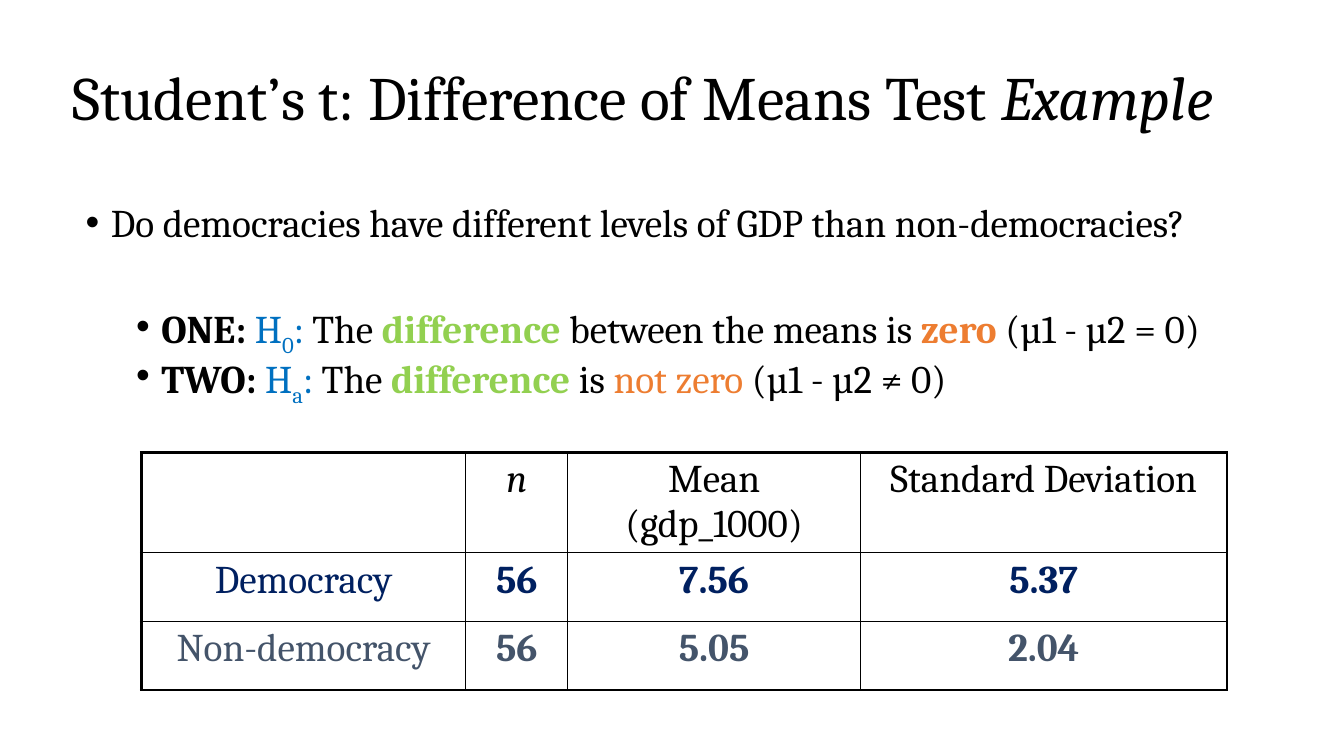
from lxml import etree
from pptx import Presentation
from pptx.dml.color import RGBColor
from pptx.enum.text import MSO_ANCHOR, MSO_AUTO_SIZE, PP_ALIGN
from pptx.oxml.ns import qn
from pptx.util import Cm, Pt

LEFT, CENTER = PP_ALIGN.LEFT, PP_ALIGN.CENTER
TOP, MIDDLE = MSO_ANCHOR.TOP, MSO_ANCHOR.MIDDLE
NO_FIT = MSO_AUTO_SIZE.NONE
FONT = "Cambria"
BLACK, BLUE, GREEN, ORANGE = "000000", "0070C0", "92D050", "ED7D31"
NAVY, SLATE = "002060", "44546A"
COLUMN_WIDTHS = (8.18, 2.57, 7.37, 9.24)
ROW_HEIGHTS = (2.53, 1.73, 1.73)
THIN, THICK = 1, 2.25


def color(value):
    return RGBColor.from_string(value)


def format_span(span, size, shade=BLACK, bold=False, italic=False):
    font = span.font
    font.name, font.size = FONT, Pt(size)
    font.bold, font.italic = bold, italic
    font.color.rgb = color(shade)


def add_span(para, text, size, shade=BLACK, bold=False, italic=False, subscript=False):
    span = para.add_run()
    span.text = text
    format_span(span, size, shade, bold, italic)
    if subscript:
        span._r.get_or_add_rPr().set("baseline", "-25000")


def place(box, left, top, width, height, anchor):
    box.left, box.top, box.width, box.height = Cm(left), Cm(top), Cm(width), Cm(height)
    frame = box.text_frame
    frame.word_wrap = True
    frame.auto_size = NO_FIT
    frame.vertical_anchor = anchor
    return frame


def format_bullet(para, level, indent, space_before):
    para.level = level
    para.alignment = LEFT
    para.line_spacing = 0.8
    para.space_before = Pt(space_before)
    properties = para._p.get_or_add_pPr()
    properties.set("marL", str(Cm(indent)))
    properties.set("indent", str(-Cm(0.635)))
    etree.SubElement(properties, qn("a:buFont")).set("typeface", "Arial")
    etree.SubElement(properties, qn("a:buChar")).set("char", "•")


def add_title(page):
    frame = place(page.shapes.title, 1.57, 0.94, 30.71, 3.18, MIDDLE)
    para = frame.paragraphs[0]
    para.alignment = LEFT
    para.line_spacing = 0.9
    add_span(para, "Student’s t: Difference of Means Test ", 44)
    add_span(para, "Example", 44, italic=True)


def add_hypothesis(frame, label, subscript, claim, space_before):
    para = frame.add_paragraph()
    format_bullet(para, 1, 1.905, space_before)
    add_span(para, label, 28, bold=True)
    add_span(para, "H", 28, BLUE)
    add_span(para, subscript, 28, BLUE, subscript=True)
    add_span(para, ": ", 28, BLUE)
    add_span(para, "The ", 28)
    add_span(para, "difference ", 28, GREEN, bold=True)
    for text, shade, bold in claim:
        add_span(para, text, 28, shade, bold)


def add_body(page):
    frame = place(page.placeholders[1], 1.905, 5.1, 29.85, 5.92, TOP)
    question = frame.paragraphs[0]
    format_bullet(question, 0, 0.635, 10)
    add_span(question, "Do democracies have different levels of GDP than non-democracies?", 28)
    add_hypothesis(frame, "ONE: ", "0", (
        ("between the means is ", BLACK, False),
        ("zero ", ORANGE, True),
        ("(µ1 - µ2 = 0)", BLACK, False),
    ), 46)
    add_hypothesis(frame, "TWO: ", "a", (
        ("is ", BLACK, False),
        ("not zero ", ORANGE, False),
        ("(µ1 - µ2 ≠ 0)", BLACK, False),
    ), 5)


def set_borders(cell, widths):
    properties = cell._tc.get_or_add_tcPr()
    for side, width in zip("LRTB", widths):
        line = etree.SubElement(properties, qn(f"a:ln{side}"))
        line.set("w", str(Pt(width)))
        fill = etree.SubElement(line, qn("a:solidFill"))
        etree.SubElement(fill, qn("a:srgbClr")).set("val", BLACK)


def fill_cell(cell, text, shade, bold, italic):
    cell.fill.background()
    cell.vertical_anchor = TOP
    cell.text_frame.text = text
    para = cell.text_frame.paragraphs[0]
    para.alignment = CENTER
    for span in para.runs:
        format_span(span, 28, shade, bold, italic)


def add_statistics(page):
    rows = (
        (BLACK, ("", "n", "Mean (gdp_1000)", "Standard Deviation")),
        (NAVY, ("Democracy", "56", "7.56", "5.37")),
        (SLATE, ("Non-democracy", "56", "5.05", "2.04")),
    )
    last = len(COLUMN_WIDTHS) - 1
    table = page.shapes.add_table(
        len(rows), len(COLUMN_WIDTHS), Cm(3.56), Cm(11.4),
        Cm(sum(COLUMN_WIDTHS)), Cm(sum(ROW_HEIGHTS)),
    ).table
    table.first_row = table.horz_banding = False
    for column, width in zip(table.columns, COLUMN_WIDTHS):
        column.width = Cm(width)
    for row, height in zip(table.rows, ROW_HEIGHTS):
        row.height = Cm(height)
    for r, (shade, texts) in enumerate(rows):
        for c, text in enumerate(texts):
            cell = table.cell(r, c)
            set_borders(cell, (
                THICK if c == 0 else THIN,
                THICK if c == last else THIN,
                THICK if r == 0 else THIN,
                THIN,
            ))
            fill_cell(cell, text, shade, bold=r > 0 and c > 0, italic=text == "n")


def main():
    deck = Presentation()
    deck.slide_width, deck.slide_height = Cm(33.867), Cm(19.05)
    page = deck.slides.add_slide(deck.slide_layouts[1])
    add_title(page)
    add_body(page)
    add_statistics(page)
    deck.save("out.pptx")


if __name__ == "__main__":
    main()
